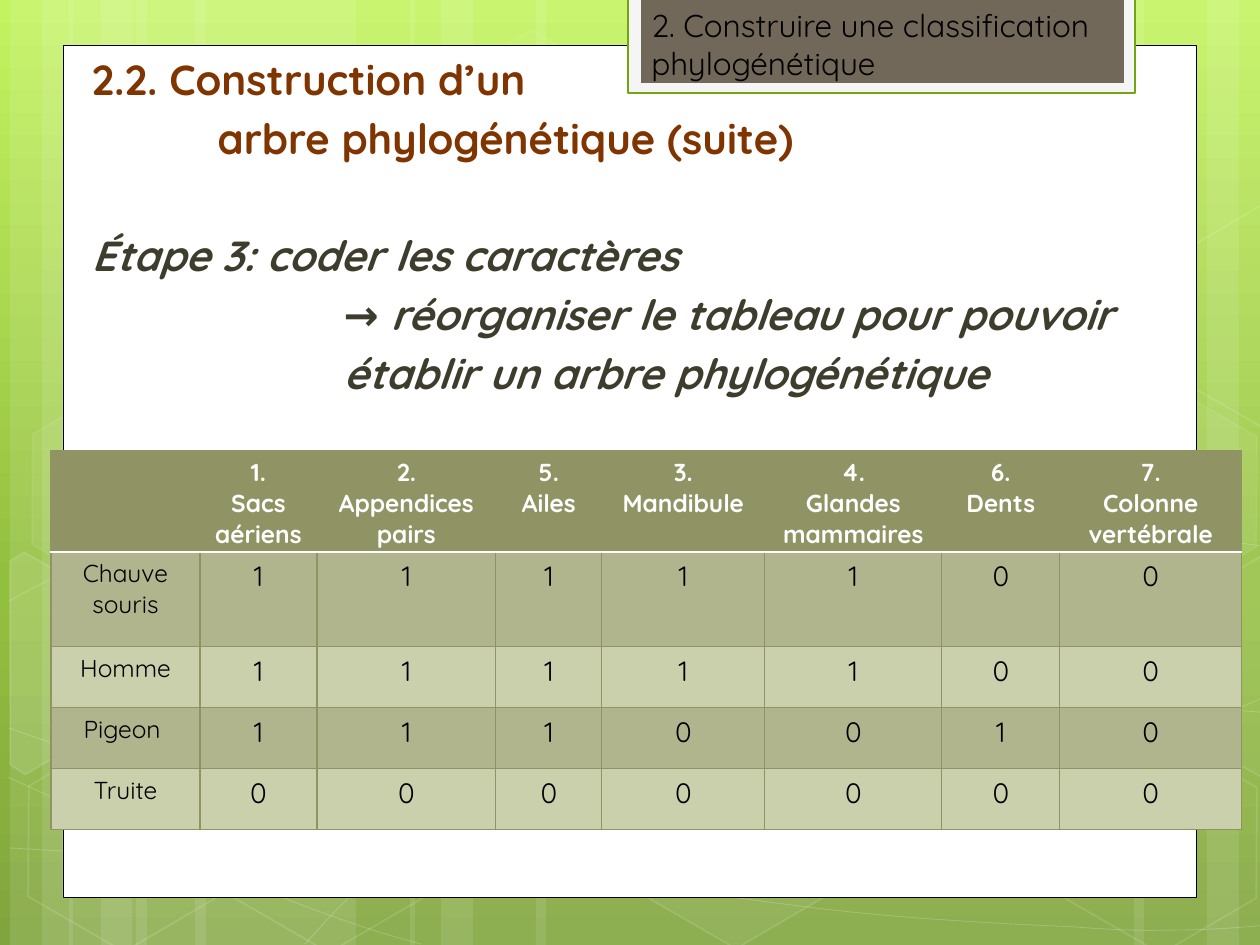
import math
from typing import NamedTuple, Optional

import pptx
import pptx.dml.color
import pptx.enum.shapes
import pptx.enum.text
import pptx.oxml
import pptx.oxml.ns
import pptx.util

RGB = pptx.dml.color.RGBColor
SHAPE = pptx.enum.shapes.MSO_SHAPE
ALIGN = pptx.enum.text.PP_ALIGN
Pt = pptx.util.Pt
qn = pptx.oxml.ns.qn

SCALE = 914400 / 126  # EMU per px
FONT = "Quicksand"
WHITE = RGB(0xFF, 0xFF, 0xFF)
BLACK = RGB(0x00, 0x00, 0x00)
BROWN = RGB(0x80, 0x34, 0x00)
DARK = RGB(0x3E, 0x3D, 0x2D)
TAB_FRAME = RGB(0xF5, 0xF5, 0xF5)
TAB_LINE = RGB(0x74, 0xA5, 0x10)
TAB_FILL = RGB(0x71, 0x68, 0x5A)
OLIVE = RGB(0x90, 0x94, 0x65)
ROW_DARK = RGB(0xB1, 0xB5, 0x8E)
ROW_LIGHT = RGB(0xCA, 0xCF, 0xAC)
GRADIENT = [(0, RGB(0xC3, 0xF3, 0x5F)), (62, RGB(0x93, 0xBF, 0x3F)), (100, RGB(0x81, 0xA5, 0x3E))]


class Hexagon(NamedTuple):
    x: int
    y: int
    fill_alpha: int
    line_alpha: int


class CutHexagon(NamedTuple):
    points: list
    center: tuple
    fill_alpha: int


class Line(NamedTuple):
    text: str
    color: RGB
    italic: bool = False
    indent: int = 0
    before: float = 4.8


BANDS = [(136, 220), (10, 63), (42, 105), (195, 220), (69, 63), (101, 105),
         (924, 220), (1207, 63), (1134, 105), (536, 388), (410, 63), (441, 105)]
# Each curve: a start point, then three Bézier points per segment
CURVES = [
    [(9, 848), (77, 852), (145, 856), (239, 854), (334, 853), (451, 851), (577, 838),
     (703, 825), (882, 801), (998, 777), (1113, 753), (1231, 716), (1269, 694)],
    [(9, 601), (45, 581), (82, 562), (152, 543), (224, 524), (326, 496), (437, 488),
     (549, 479), (685, 478), (824, 488), (963, 498), (1193, 537), (1269, 547)],
    [(8, 777), (160, 847), (311, 916), (421, 944)],
    [(9, 728), (48, 742), (88, 756), (161, 776), (234, 795), (344, 827), (450, 848),
     (554, 869), (687, 892), (791, 905), (896, 919), (1008, 924), (1075, 927),
     (1140, 932), (1158, 930), (1191, 930), (1223, 929), (1246, 927), (1269, 925)],
    [(305, 944), (328, 919), (350, 893), (381, 871), (411, 848), (454, 823), (489, 805),
     (524, 788), (546, 780), (592, 767), (638, 754), (722, 737), (766, 728),
     (811, 719), (818, 719), (857, 717), (896, 713), (958, 709), (1000, 708),
     (1045, 707), (1116, 708), (1116, 708), (1144, 708), (1172, 708), (1201, 708),
     (1223, 709), (1245, 711), (1268, 713)],
]
HEXAGONS = [Hexagon(421, 45, 4, 8), Hexagon(626, 742, 6, 12), Hexagon(14, 745, 0, 12),
            Hexagon(18, 393, 7, 8), Hexagon(219, 746, 0, 12), Hexagon(949, 571, 10, 12),
            Hexagon(1051, 747, 0, 12), Hexagon(1051, 396, 7, 8)]
# Hexagons cut off by the slide edge, with their centres of rotation
CUT_HEXAGONS = [
    CutHexagon([(10, 561), (24, 552), (121, 607), (120, 718), (25, 774), (10, 765)], (45, 674), 10),
    CutHexagon([(1167, 611), (1261, 556), (1271, 562), (1271, 772), (1263, 777), (1167, 722)],
               (1241, 655), 4),
    CutHexagon([(1167, 261), (1261, 205), (1273, 212), (1271, 422), (1263, 427), (1167, 372)],
               (1241, 304), 0),
]
BODY = [
    Line("2.2. Construction d’un ", BROWN, before=0),
    Line("arbre phylogénétique (suite)", BROWN, indent=126),
    Line("Étape 3: coder les caractères ", DARK, italic=True, before=38.3),
    Line("→ réorganiser le tableau pour pouvoir ", DARK, italic=True, indent=252),
    Line("établir un arbre phylogénétique", DARK, italic=True, indent=252),
]
COLUMNS = [149, 117, 179, 106, 163, 177, 118, 182]
ROWS = [96, 95, 61, 61, 61]
HEADER = ["", "1.\nSacs aériens", "2.\nAppendices pairs", "5. Ailes", "3.\nMandibule",
          "4.\nGlandes mammaires", "6.\nDents", "7.\nColonne vertébrale"]
SPECIES = [("Chauve souris", "1111100"), ("Homme", "1111100"),
           ("Pigeon ", "1110010"), ("Truite", "0000000")]


def px(n: float) -> int:
    return round(n * SCALE)


def set_alpha(fill, percent: int) -> None:
    if percent < 100:
        fill._xPr.find(qn("a:solidFill"))[0].append(pptx.oxml.parse_xml(
            f'<a:alpha {pptx.oxml.ns.nsdecls("a")} val="{percent * 1000}"/>'))


def paint(sp, fill: Optional[RGB], line: Optional[RGB] = None, width: float = 1,
          fill_alpha: int = 100, line_alpha: int = 100) -> None:
    sp.shadow.inherit = False
    if fill is None or fill_alpha == 0:
        sp.fill.background()
    else:
        sp.fill.solid()
        sp.fill.fore_color.rgb = fill
        set_alpha(sp.fill, fill_alpha)
    if line is None:
        sp.line.fill.background()
    else:
        sp.line.color.rgb = line
        sp.line.width = Pt(width)
        set_alpha(sp.line.fill, line_alpha)


def add_shape(s, kind, x: int, y: int, w: int, h: int):
    return s.shapes.add_shape(kind, px(x), px(y), px(w), px(h))


def add_outline(s, points: list, close: bool):
    builder = s.shapes.build_freeform(*points[0], scale=SCALE)
    builder.add_line_segments(points[1:], close=close)
    return builder.convert_to_shape()


def add_curve(s, points: list):
    sp = add_outline(s, points, False)
    outline = next(sp._element.iter(qn("a:pathLst")))[0]
    segments = outline.findall(qn("a:lnTo"))
    for i in range(0, len(segments), 3):
        curve = outline.makeelement(qn("a:cubicBezTo"), {})
        outline.append(curve)
        for segment in segments[i:i + 3]:
            curve.append(segment[0])
            outline.remove(segment)
    return sp


def turn(point: tuple, center: tuple, degrees: float) -> tuple:
    a = math.radians(degrees)
    dx, dy = point[0] - center[0], point[1] - center[1]
    return (round(center[0] + dx * math.cos(a) - dy * math.sin(a)),
            round(center[1] + dx * math.sin(a) + dy * math.cos(a)))


def add_run(p, text: str, size: int, color: RGB, bold: bool = False, italic: bool = False) -> None:
    r = p.add_run()
    r.text = text
    r.font.name, r.font.size = FONT, Pt(size)
    r.font.bold, r.font.italic = bold, italic
    r.font.color.rgb = color


def draw_background(s) -> None:
    fill = s.background.fill
    fill.gradient()
    fill.gradient_angle = 270
    stops = fill._fill._gradFill.find(qn("a:gsLst"))
    for stop in list(stops):
        stops.remove(stop)
    for pos, color in GRADIENT:
        stops.append(pptx.oxml.parse_xml(
            f'<a:gs {pptx.oxml.ns.nsdecls("a")} pos="{pos * 1000}"><a:srgbClr val="{color}"/></a:gs>'))
    for x, w in BANDS:
        paint(add_shape(s, SHAPE.RECTANGLE, x, 0, w, 945), WHITE, fill_alpha=10)
    for points in CURVES:
        paint(add_curve(s, points), None, WHITE, 0.5, line_alpha=20)
    for h in HEXAGONS:
        sp = add_shape(s, SHAPE.HEXAGON, h.x, h.y, 220, 192)
        sp.rotation = 30
        sp.adjustments[0] = 0.285
        paint(sp, WHITE, WHITE, 1, h.fill_alpha, h.line_alpha)
    for cut in CUT_HEXAGONS:
        sp = add_outline(s, [turn(point, cut.center, -30) for point in cut.points], True)
        sp.rotation = 30
        paint(sp, WHITE, WHITE, 1, cut.fill_alpha, 12)


def draw_body(s, body) -> None:
    s.shapes._spTree.append(body._element)  # in front of the panel
    body.left, body.top, body.width, body.height = px(69), px(47), px(1123), px(898)
    tf = body.text_frame
    tf.auto_size = pptx.enum.text.MSO_AUTO_SIZE.NONE
    tf.vertical_anchor = pptx.enum.text.MSO_ANCHOR.TOP
    for i, line in enumerate(BODY):
        p = tf.add_paragraph() if i else tf.paragraphs[0]
        p.alignment = ALIGN.JUSTIFY
        p.space_before = Pt(line.before)
        pPr = p._p.get_or_add_pPr()
        pPr.set("marL", str(px(10 + line.indent)))
        pPr.set("indent", "0")
        pPr.append(pPr.makeelement(qn("a:buNone"), {}))
        add_run(p, line.text, 24, line.color, True, line.italic)


def add_border(cell, side: str, color: RGB, width: float) -> None:
    cell._tc.get_or_add_tcPr().append(pptx.oxml.parse_xml(
        f'<a:{side} {pptx.oxml.ns.nsdecls("a")} w="{Pt(width)}"><a:solidFill>'
        f'<a:srgbClr val="{color}"/></a:solidFill></a:{side}>'))


def draw_table(s) -> None:
    frame = s.shapes.add_table(len(ROWS), len(COLUMNS), px(51), px(451), px(sum(COLUMNS)), px(sum(ROWS)))
    table = frame.table
    for column, w in zip(table.columns, COLUMNS):
        column.width = px(w)
    for row, h in zip(table.rows, ROWS):
        row.height = px(h)
    for i, texts in enumerate([HEADER] + [[name, *codes] for name, codes in SPECIES]):
        for j, text in enumerate(texts):
            cell = table.cell(i, j)
            for side in ("lnL", "lnR", "lnT", "lnB"):
                rule = (side == "lnB" and i == 0) or (side == "lnT" and i == 1)
                add_border(cell, side, WHITE if rule else OLIVE, 1.25 if rule else 0.75)
            cell.fill.solid()
            cell.fill.fore_color.rgb = OLIVE if i == 0 else ROW_DARK if i % 2 else ROW_LIGHT
            for k, part in enumerate(text.split("\n") if text else []):
                p = cell.text_frame.add_paragraph() if k else cell.text_frame.paragraphs[0]
                p.alignment = ALIGN.CENTER
                add_run(p, part, 16 if i and j else 14, BLACK if i else WHITE, i == 0)


def main() -> None:
    prs = pptx.Presentation()
    prs.slide_width, prs.slide_height = px(1260), px(945)
    s = prs.slides.add_slide(prs.slide_layouts[1])
    title, body = s.placeholders
    title._element.getparent().remove(title._element)
    draw_background(s)
    # White panel and chapter tab
    paint(add_shape(s, SHAPE.RECTANGLE, 63, 45, 1134, 853), WHITE, BLACK, 0.5)
    paint(add_shape(s, SHAPE.RECTANGLE, 628, -3, 507, 96), TAB_FRAME, TAB_LINE, 1.25)
    paint(add_shape(s, SHAPE.RECTANGLE, 641, -3, 483, 86), TAB_FILL)
    draw_body(s, body)
    # Chapter name
    tf = s.shapes.add_textbox(px(639), 0, px(505), px(89)).text_frame
    tf.word_wrap = True
    add_run(tf.paragraphs[0], "2. Construire une classification phylogénétique", 18, BLACK)
    draw_table(s)
    prs.save("out.pptx")


if __name__ == "__main__":
    main()
